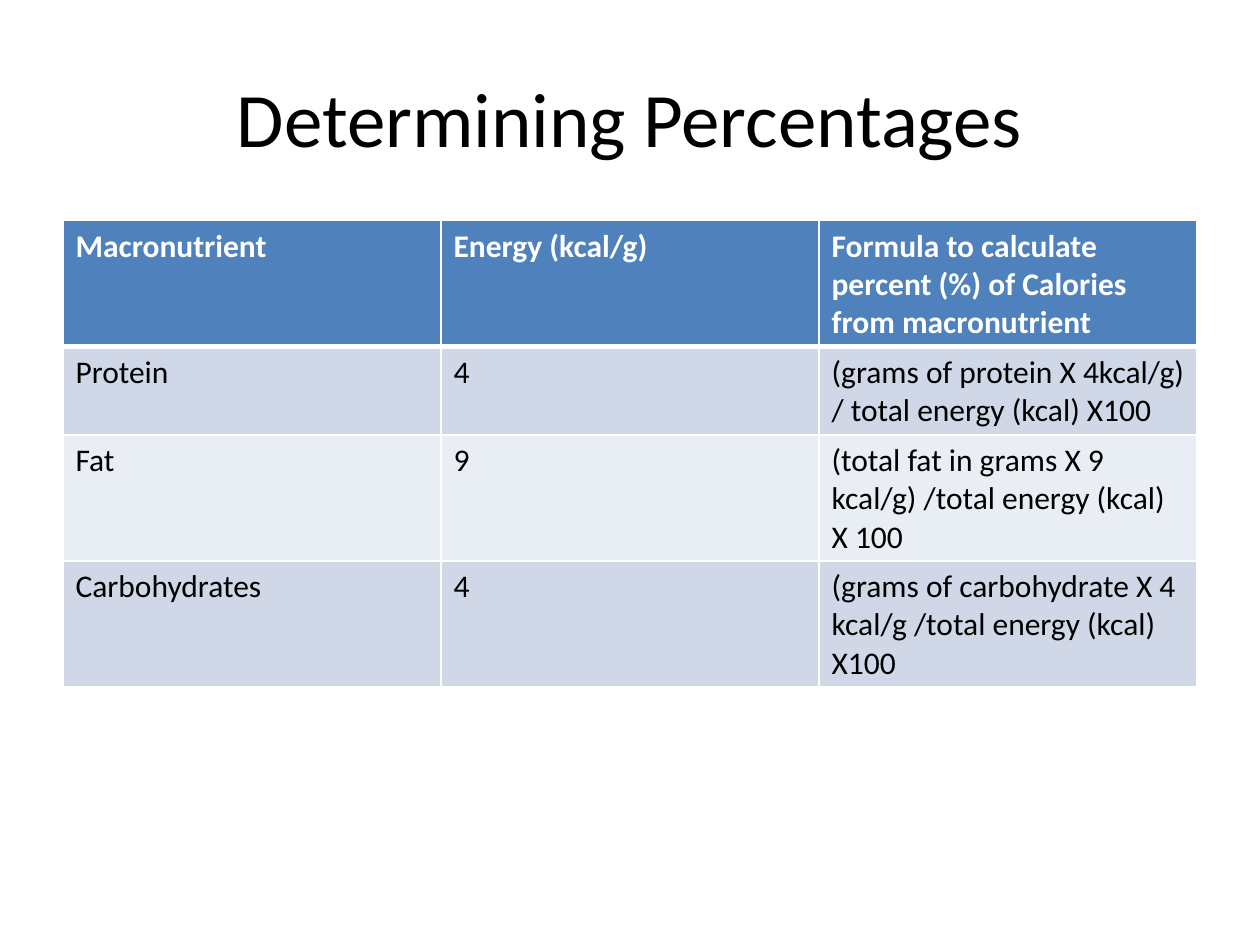
from dataclasses import dataclass

from lxml import etree
from pptx import Presentation
from pptx.dml.color import RGBColor
from pptx.enum.text import MSO_ANCHOR, PP_ALIGN
from pptx.oxml.ns import qn
from pptx.slide import Slide
from pptx.table import _Cell
from pptx.text.text import TextFrame
from pptx.util import Cm, Pt

CENTER = PP_ALIGN.CENTER
MIDDLE = MSO_ANCHOR.MIDDLE
FONT = "Calibri"
COLORS = {
    "text": "000000",
    "header_text": "FFFFFF",
    "header": "4F81BD",
    "odd_row": "D0D8E8",
    "even_row": "E9EDF4",
    "border": "FFFFFF",
}
MARGIN = Cm(1.27)
CONTENT_WIDTH = Cm(22.86)
ROW_HEIGHT = Cm(1.03)


@dataclass(frozen=True)
class Macronutrient:
    name: str
    energy: str
    formula: str


HEADER = Macronutrient(
    "Macronutrient",
    "Energy (kcal/g)",
    "Formula to calculate percent (%) of Calories from macronutrient",
)
MACRONUTRIENTS = [
    Macronutrient("Protein", "4", "(grams of protein X 4kcal/g) / total energy (kcal) X100"),
    Macronutrient("Fat", "9", "(total fat in grams X 9 kcal/g) /total energy (kcal) X 100"),
    Macronutrient("Carbohydrates", "4", "(grams of carbohydrate X 4 kcal/g /total energy (kcal) X100"),
]


def write_text(text_frame: TextFrame, text: str, size: int, color: str, bold: bool = False) -> None:
    text_frame.text = text
    font = text_frame.paragraphs[0].runs[0].font
    font.name = FONT
    font.size = Pt(size)
    font.bold = bold
    font.color.rgb = RGBColor.from_string(COLORS[color])


def draw_borders(cell: _Cell, widths: dict[str, float]) -> None:
    properties = cell._tc.get_or_add_tcPr()
    for position, (side, width) in enumerate(widths.items()):
        line = etree.Element(qn(f"a:{side}"), w=str(Pt(width)))
        fill = etree.SubElement(line, qn("a:solidFill"))
        etree.SubElement(fill, qn("a:srgbClr"), val=COLORS["border"])
        properties.insert(position, line)


def add_title(slide: Slide, text: str) -> None:
    shape = slide.shapes.add_textbox(MARGIN, Cm(0.76), CONTENT_WIDTH, Cm(3.18))
    text_frame = shape.text_frame
    text_frame.word_wrap = True
    text_frame.vertical_anchor = MIDDLE
    write_text(text_frame, text, 44, "text")
    text_frame.paragraphs[0].alignment = CENTER


def add_macronutrient_table(slide: Slide, records: list[Macronutrient]) -> None:
    rows = [(record.name, record.energy, record.formula) for record in records]
    table = slide.shapes.add_table(
        len(rows), len(rows[0]), MARGIN, Cm(4.45), CONTENT_WIDTH, ROW_HEIGHT * len(rows)
    ).table
    for row_index, row in enumerate(rows):
        is_header = row_index == 0
        fill = "header" if is_header else "odd_row" if row_index % 2 else "even_row"
        widths = {
            "lnL": 1,
            "lnR": 1,
            "lnT": 3 if row_index == 1 else 1,
            "lnB": 3 if is_header else 1,
        }
        for column_index, text in enumerate(row):
            cell = table.cell(row_index, column_index)
            write_text(cell.text_frame, text, 18, "header_text" if is_header else "text", is_header)
            cell.fill.solid()
            cell.fill.fore_color.rgb = RGBColor.from_string(COLORS[fill])
            draw_borders(cell, widths)


def main() -> None:
    """Build the slide on macronutrient percentages."""
    presentation = Presentation()
    presentation.slide_width = Cm(25.4)
    presentation.slide_height = Cm(19.05)
    slide = presentation.slides.add_slide(presentation.slide_layouts[6])
    add_title(slide, "Determining Percentages")
    add_macronutrient_table(slide, [HEADER, *MACRONUTRIENTS])
    presentation.save("out.pptx")


if __name__ == "__main__":
    main()
